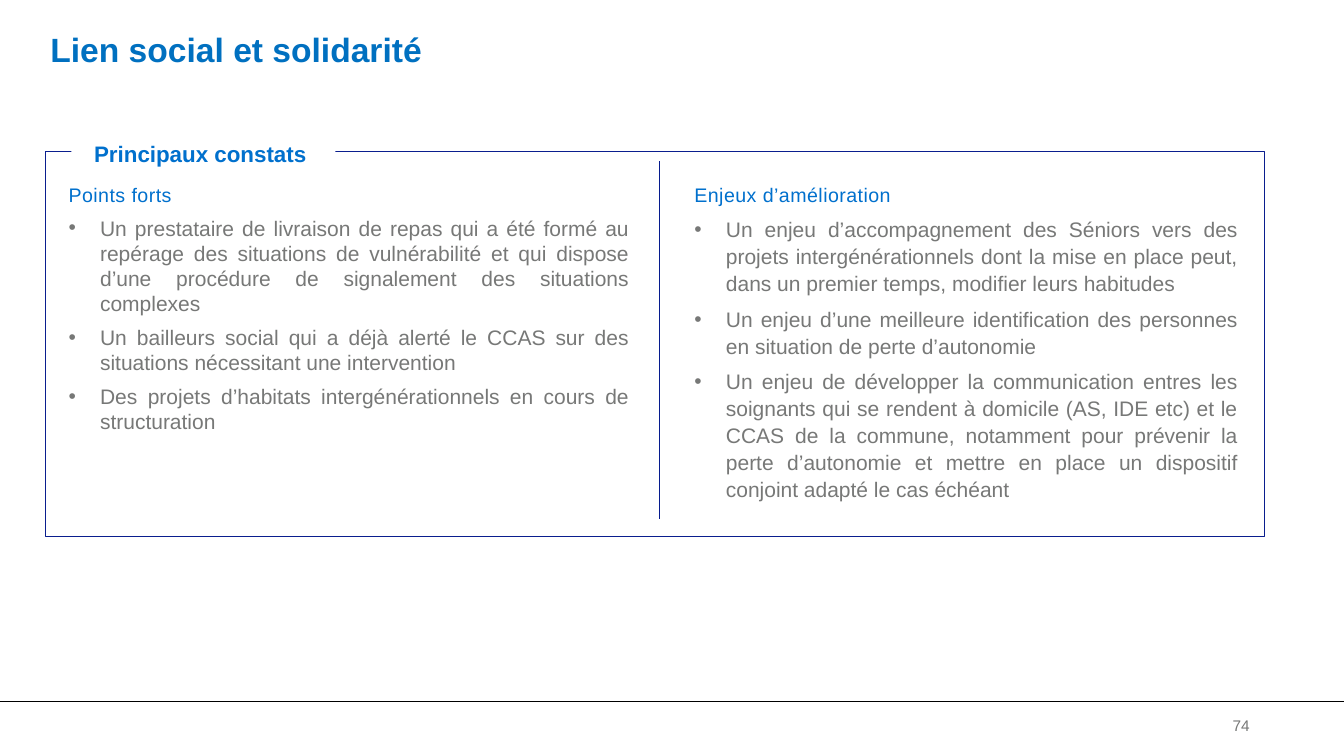
from lxml import etree
from pptx import Presentation
from pptx import util as u
from pptx.dml.color import RGBColor
from pptx.enum import shapes, text
from pptx.oxml import ns

TITLE_BLUE = RGBColor(0x00, 0x70, 0xC0)
HEADING_BLUE = RGBColor(0x00, 0x70, 0xCD)
FRAME_NAVY = RGBColor(0x0A, 0x1E, 0x8E)
DIVIDER_NAVY = RGBColor(0x06, 0x1B, 0x8D)
GREY = RGBColor(0x77, 0x78, 0x77)
BLACK = RGBColor(0, 0, 0)
WHITE = RGBColor(255, 255, 255)

STRENGTHS = [
    "Un prestataire de livraison de repas qui a été formé au repérage des situations de vulnérabilité et qui dispose d’une procédure de signalement des situations complexes",
    "Un bailleurs social qui a déjà alerté le CCAS sur des situations nécessitant une intervention",
    "Des projets d’habitats intergénérationnels en cours de structuration",
]
CHALLENGES = [
    "Un enjeu d’accompagnement des Séniors vers des projets intergénérationnels dont la mise en place peut, dans un premier temps, modifier leurs habitudes",
    "Un enjeu d’une meilleure identification des personnes en situation de perte d’autonomie",
    "Un enjeu de développer la communication entres les soignants qui se rendent à domicile (AS, IDE etc) et le CCAS de la commune, notamment pour prévenir la perte d’autonomie et mettre en place un dispositif conjoint adapté le cas échéant",
]


class SlideBuilder:
    """Draws the elements of one slide in a shared style, with lengths in points."""

    font = "Arial"
    indent = 22.5

    def __init__(self, deck):
        self.slide = deck.slides.add_slide(deck.slide_layouts[5])

    def style(self, paragraph, size, color, bold=False):
        for run in paragraph.runs:
            run.font.name = self.font
            run.font.size = u.Pt(size)
            run.font.bold = bold
            run.font.color.rgb = color

    def margins(self, frame, left=7.2, top=3.6):
        frame.margin_left, frame.margin_top = u.Pt(left), u.Pt(top)
        frame.margin_right, frame.margin_bottom = u.Pt(7.2), u.Pt(3.6)
        frame.auto_size = text.MSO_AUTO_SIZE.NONE

    def title(self, wording, left, top, width, height):
        heading = self.slide.shapes.title
        heading.left, heading.top = u.Pt(left), u.Pt(top)
        heading.width, heading.height = u.Pt(width), u.Pt(height)
        frame = heading.text_frame
        frame.text = wording
        frame.vertical_anchor = text.MSO_ANCHOR.TOP
        self.margins(frame, 0, 0)
        line = frame.paragraphs[0]
        line.alignment = text.PP_ALIGN.LEFT
        line.line_spacing = 0.9
        line.space_before = u.Pt(0)
        self.style(line, 24, TITLE_BLUE, True)

    def rectangle(self, left, top, width, height, fill=None, outline=None):
        panel = self.slide.shapes.add_shape(
            shapes.MSO_SHAPE.RECTANGLE, u.Pt(left), u.Pt(top), u.Pt(width), u.Pt(height))
        panel.shadow.inherit = False
        if fill is None:
            panel.fill.background()
        else:
            panel.fill.solid()
            panel.fill.fore_color.rgb = fill
        if outline is None:
            panel.line.fill.background()
        else:
            panel.line.color.rgb = outline
            panel.line.width = u.Pt(0.25)
        return panel

    def label(self, wording, left, top, width, height):
        frame = self.rectangle(left, top, width, height, fill=WHITE).text_frame
        frame.text = wording
        frame.word_wrap = False
        frame.vertical_anchor = text.MSO_ANCHOR.MIDDLE
        self.margins(frame)
        frame.paragraphs[0].alignment = text.PP_ALIGN.CENTER
        self.style(frame.paragraphs[0], 16, HEADING_BLUE, True)

    def line(self, x1, y1, x2, y2, color):
        rule = self.slide.shapes.add_connector(
            shapes.MSO_CONNECTOR.STRAIGHT, u.Pt(x1), u.Pt(y1), u.Pt(x2), u.Pt(y2))
        rule.line.color.rgb = color
        rule.line.width = u.Pt(0.75)
        etree.SubElement(rule._element.spPr, ns.qn("a:effectLst"))

    def bullet(self, paragraph):
        props = paragraph._p.get_or_add_pPr()
        props.set("marL", str(u.Pt(self.indent)))
        props.set("indent", str(-u.Pt(self.indent)))
        tint = etree.SubElement(props, ns.qn("a:buClr"))
        etree.SubElement(tint, ns.qn("a:srgbClr"), val=str(GREY))
        etree.SubElement(props, ns.qn("a:buFont"), typeface=self.font)
        etree.SubElement(props, ns.qn("a:buChar"), char="•")

    def column(self, heading, findings, left, top, width, height, spacing):
        box = self.slide.shapes.add_textbox(u.Pt(left), u.Pt(top), u.Pt(width), u.Pt(height))
        frame = box.text_frame
        frame.word_wrap = True
        self.margins(frame, left=0)
        opening = frame.paragraphs[0]
        opening.text = heading
        opening.space_after = u.Pt(6)
        self.style(opening, 14, HEADING_BLUE)
        opening.runs[0].font._element.set("spc", "30")
        for finding in findings:
            item = frame.add_paragraph()
            item.text = finding
            self.bullet(item)
            item.alignment = text.PP_ALIGN.JUSTIFY
            item.line_spacing = spacing
            item.space_after = u.Pt(0 if finding == findings[-1] else 6)
            self.style(item, 15, GREY)

    def page_number(self, number, left, top, width, height):
        box = self.slide.shapes.add_textbox(u.Pt(left), u.Pt(top), u.Pt(width), u.Pt(height))
        frame = box.text_frame
        frame.text = number
        frame.word_wrap = False
        self.margins(frame)
        self.style(frame.paragraphs[0], 11, GREY)


def main():
    deck = Presentation()
    deck.slide_width, deck.slide_height = u.Pt(960), u.Pt(540)
    page = SlideBuilder(deck)
    page.line(0, 501, 960, 501, BLACK)
    page.title("Lien social et solidarité", 36, 24, 912, 28)
    page.rectangle(32.4, 108, 870.5, 275, outline=FRAME_NAVY)
    page.label("Principaux constats ", 51, 101.5, 188.6, 16)
    page.column("Points forts", STRENGTHS, 49, 127.4, 407.5, 238, 1.0)
    page.column("Enjeux d’amélioration", CHALLENGES, 496, 127.4, 395.3, 234, 1.07)
    page.line(471, 115.2, 471, 370.5, DIVIDER_NAVY)
    page.page_number("74", 873.4, 508.3, 65, 20)
    deck.save("out.pptx")


if __name__ == "__main__":
    main()
